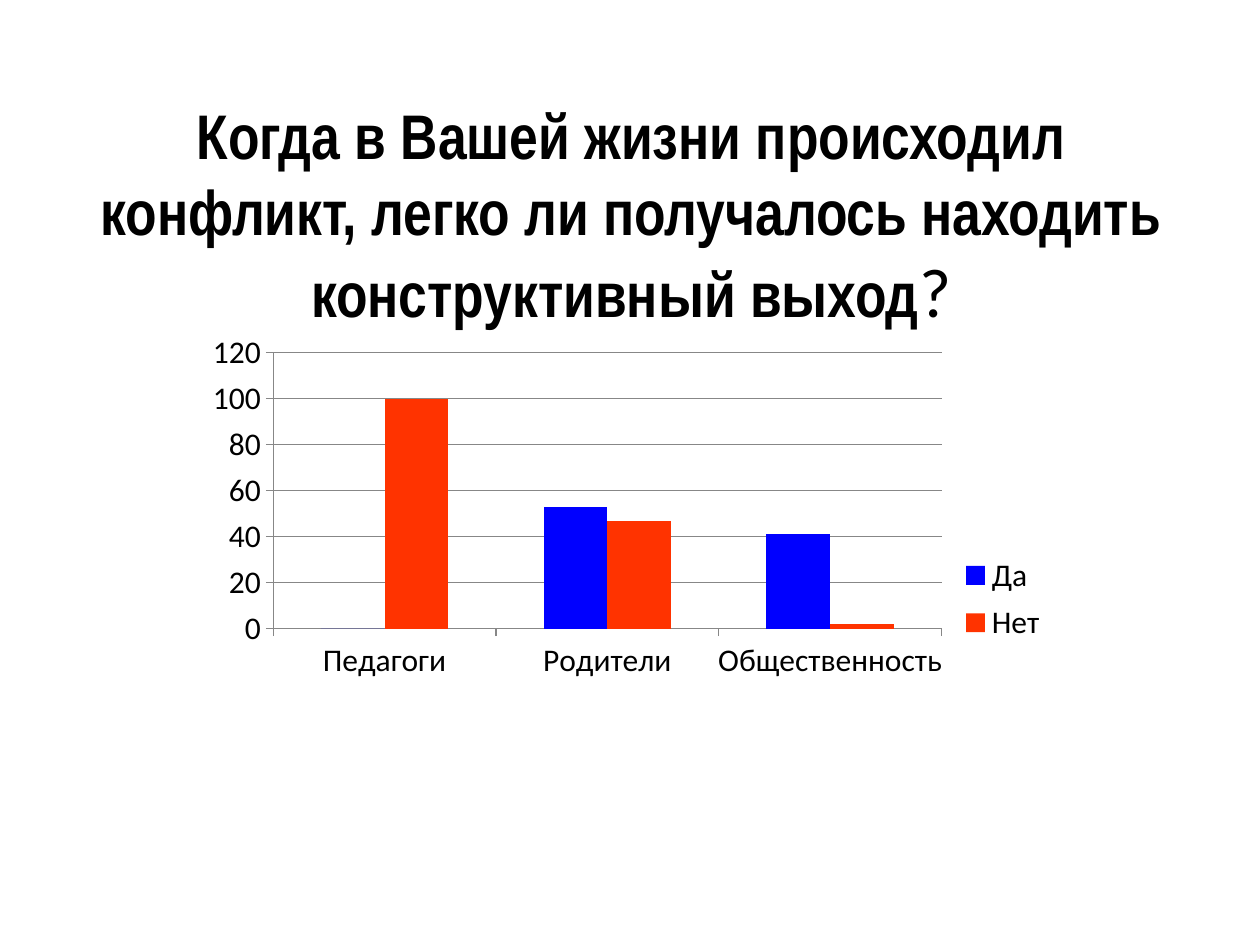
"""Builds a survey slide with a question and a clustered column chart."""
import pptx
import pptx.chart.data
import pptx.dml.color
import pptx.enum.chart
import pptx.enum.text
import pptx.oxml
import pptx.util

WIDTH, HEIGHT = pptx.util.Inches(10), pptx.util.Inches(7.5)
TITLE_BOX = (0.051, 0.143, 0.9, 0.167)
CHART_BOX = (0.138, 0.353, 0.698, 0.551)
PLOT_SHARE = (0.113, 0.037, 0.76, 0.53)
LEGEND_SHARE = (0.885, 0.41, 0.125, 0.2)
QUESTION = [
    ("Когда в Вашей жизни происходил конфликт, легко ли получалось "
     "находить конструктивный выход", "Arial Narrow", 36, True),
    ("?", "Calibri", 39.6, False),
]
GROUPS = ["Педагоги", "Родители", "Общественность"]
ANSWERS = [("Да", (0, 53, 41), "0000FF"), ("Нет", (100, 47, 2), "FF3300")]


def colour(value):
    """Turn a hex string into a colour."""
    return pptx.dml.color.RGBColor.from_string(value)


def place(box):
    """Turn shares of the slide into lengths."""
    return [int(share * side) for share, side in zip(box, (WIDTH, HEIGHT) * 2)]


def style(font, name, size, bold=False):
    """Set the face, size, weight and black colour of a font."""
    font.name, font.size, font.bold = name, pptx.util.Pt(size), bold
    font.color.rgb = colour("000000")


def set_layout(element, shares, anchor, inner=False):
    """Fix a chart part at shares of the chart's size, after the anchor tag."""
    for old in element.findall(pptx.oxml.ns.qn("c:layout")):
        element.remove(old)
    target = '<c:layoutTarget val="inner"/>' if inner else ""
    modes = '<c:xMode val="edge"/><c:yMode val="edge"/>'
    sizes = "".join(f'<c:{tag} val="{share}"/>' for tag, share in zip("xywh", shares))
    layout = pptx.oxml.parse_xml(
        f'<c:layout {pptx.oxml.ns.nsdecls("c")}><c:manualLayout>'
        f"{target}{modes}{sizes}</c:manualLayout></c:layout>")
    if anchor:
        element.find(pptx.oxml.ns.qn(anchor)).addnext(layout)
    else:
        element.insert(0, layout)


def add_question(page, box):
    """Write the question into the title placeholder."""
    title = page.shapes.title
    title.left, title.top, title.width, title.height = place(box)
    frame = title.text_frame
    frame.word_wrap = True
    frame.auto_size = pptx.enum.text.MSO_AUTO_SIZE.NONE
    frame.vertical_anchor = pptx.enum.text.MSO_ANCHOR.MIDDLE
    para = frame.paragraphs[0]
    para.alignment = pptx.enum.text.PP_ALIGN.CENTER
    for text, name, size, bold in QUESTION:
        span = para.add_run()
        span.text = text
        style(span.font, name, size, bold)


def format_axis(axis):
    """Give an axis outward ticks and a thin grey line."""
    axis.major_tick_mark = pptx.enum.chart.XL_TICK_MARK.OUTSIDE
    axis.minor_tick_mark = pptx.enum.chart.XL_TICK_MARK.NONE
    axis.format.line.color.rgb = colour("878787")
    axis.format.line.width = pptx.util.Pt(0.75)


def add_answers(page, box):
    """Draw the answers of each group as clustered columns."""
    data = pptx.chart.data.CategoryChartData()
    data.categories = GROUPS
    for name, values, _ in ANSWERS:
        data.add_series(name, values)
    kind = pptx.enum.chart.XL_CHART_TYPE.COLUMN_CLUSTERED
    chart = page.shapes.add_chart(kind, *place(box), data).chart
    style(chart.font, "Calibri", 18)
    chart.has_title = False
    plot = chart.plots[0]
    plot.gap_width, plot.overlap, plot.vary_by_categories = 150, 0, False
    for series, (_, _, fill) in zip(plot.series, ANSWERS):
        series.format.fill.solid()
        series.format.fill.fore_color.rgb = colour(fill)
    for axis in (chart.category_axis, chart.value_axis):
        format_axis(axis)
    scale = chart.value_axis
    scale.minimum_scale, scale.maximum_scale, scale.major_unit = 0, 120, 20
    scale.has_major_gridlines = True
    grid = scale.major_gridlines.format.line
    grid.color.rgb, grid.width = colour("878787"), pptx.util.Pt(0.75)
    chart.has_legend = True
    chart.legend.position = pptx.enum.chart.XL_LEGEND_POSITION.RIGHT
    chart.legend.include_in_layout = False
    plot_area = chart.element.find(".//" + pptx.oxml.ns.qn("c:plotArea"))
    legend = chart.element.find(".//" + pptx.oxml.ns.qn("c:legend"))
    set_layout(plot_area, PLOT_SHARE, None, inner=True)
    set_layout(legend, LEGEND_SHARE, "c:legendPos")


def main():
    """Build and save the deck."""
    deck = pptx.Presentation()
    deck.slide_width, deck.slide_height = WIDTH, HEIGHT
    page = deck.slides.add_slide(deck.slide_layouts[5])
    add_question(page, TITLE_BOX)
    add_answers(page, CHART_BOX)
    deck.save("out.pptx")


if __name__ == "__main__":
    main()
